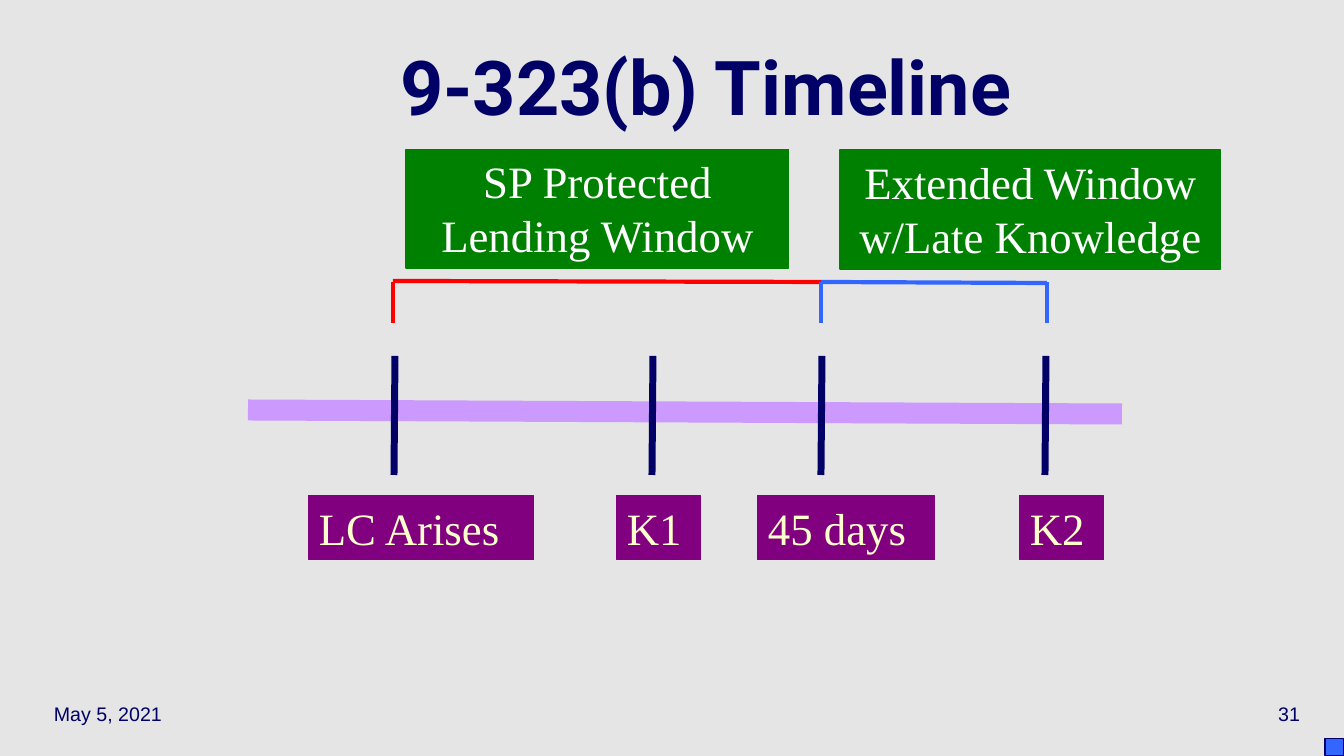
from pptx import Presentation
from pptx.dml.color import RGBColor
from pptx.enum.shapes import MSO_CONNECTOR, MSO_SHAPE
from pptx.enum.text import MSO_ANCHOR, MSO_AUTO_SIZE, PP_ALIGN
from pptx.util import Emu, Pt
from lxml import etree

LINE, RECT = MSO_CONNECTOR.STRAIGHT, MSO_SHAPE.RECTANGLE
LEFT, CENTER, RIGHT = PP_ALIGN.LEFT, PP_ALIGN.CENTER, PP_ALIGN.RIGHT
TOP, MIDDLE = MSO_ANCHOR.TOP, MSO_ANCHOR.MIDDLE
FIT = MSO_AUTO_SIZE.SHAPE_TO_FIT_TEXT
PX = 914400 / 100.8
A_NS = "http://schemas.openxmlformats.org/drawingml/2006/main"

THEME = {
    "background": "E5E5E5", "navy": "000066", "axis": "CC99FF",
    "red": "FF0000", "blue": "3366FF", "green": "008000", "purple": "800080",
    "title": {"name": "Roboto", "size": Pt(54), "bold": True},
    "label": {"name": "Times New Roman", "size": Pt(32)},
    "footer": {"name": "Arial", "size": Pt(14)},
    "white": "FFFFFF", "cream": "FFFFCC",
}


def add_box(box, text, style, color, align=LEFT, anchor=TOP, fill=None, border=None):
    """Rectangle with optional fill and text."""
    s = shapes.add_shape(RECT, *[Emu(round(v * PX)) for v in box])
    s.shadow.inherit = False
    if fill:
        s.fill.solid()
        s.fill.fore_color.rgb = RGBColor.from_string(THEME[fill])
        s.line.color.rgb = RGBColor.from_string(THEME[border or fill])
        s.line.width = Pt(0.75)
    else:
        s.fill.background()
        s.line.fill.background()
    tf = s.text_frame
    tf.word_wrap, tf.vertical_anchor = True, anchor
    p = tf.paragraphs[0]
    p.alignment = align
    if text:
        r = p.add_run()
        r.text = text
        for key, value in THEME[style].items():
            setattr(r.font, key, value)
        r.font.color.rgb = RGBColor.from_string(THEME[color])
    return s


def add_line(parent, points, color, width):
    """Straight line without shadow, from x1, y1 to x2, y2."""
    c = parent.add_connector(LINE, *[Emu(round(v * PX)) for v in points])
    c.line.color.rgb = RGBColor.from_string(THEME[color])
    c.line.width = Pt(width)
    etree.SubElement(c._element.spPr, f"{{{A_NS}}}effectLst")


prs = Presentation()
prs.slide_width, prs.slide_height = Emu(round(1344 * PX)), Emu(round(756 * PX))
slide = prs.slides.add_slide(prs.slide_layouts[6])
shapes = slide.shapes
slide.background.fill.solid()
slide.background.fill.fore_color.rgb = RGBColor.from_string(THEME["background"])

# Footer and title
add_box((44, 689, 280, 50), "May 5, 2021", "footer", "navy", LEFT, MIDDLE)
add_box((1030, 689, 280, 50), "31", "footer", "navy", RIGHT, MIDDLE)
title = add_box((90, 33, 1232, 126), "9-323(b) Timeline", "title", "navy", CENTER, MIDDLE)
title.text_frame.paragraphs[0].line_spacing = 0.7

# Timeline axis
add_line(shapes, (248, 410, 1122, 414), "axis", 15)

# Events: tick position, label left, label width
EVENTS = [
    ("LC Arises", 394, 309, 225),
    ("K1", 652, 617, 84),
    ("45 days", 821, 758, 177),
    ("K2", 1045, 1020, 84),
]
for text, x, left, width in EVENTS:
    add_line(shapes, (x + 1, 356, x, 475), "navy", 5)
    s = add_box((left, 496, width, 64), text, "label", "cream", fill="purple")
    s.text_frame.auto_size = FIT

# Windows: bracket start, end and height, label left, top and width
WINDOWS = [
    ("SP Protected Lending Window", "red", 393, 821, 281, 406, 149, 383),
    ("Extended Window w/Late Knowledge", "blue", 821, 1047, 282, 840, 150, 381),
]
for text, color, start, end, y, left, top, width in WINDOWS:
    bracket = shapes.add_group_shape().shapes
    for x in (start, end):
        add_line(bracket, (x, 323, x, 282), color, 3)
    add_line(bracket, (start, y, end, y + 1), color, 3)
    s = add_box((left, top, width, 119), text, "label", "white", CENTER, fill="green")
    s.text_frame.auto_size = FIT

# Corner marker
add_box((1325, 739, 19, 17), "", "footer", "navy", fill="blue", border="navy")

prs.save("out.pptx")
